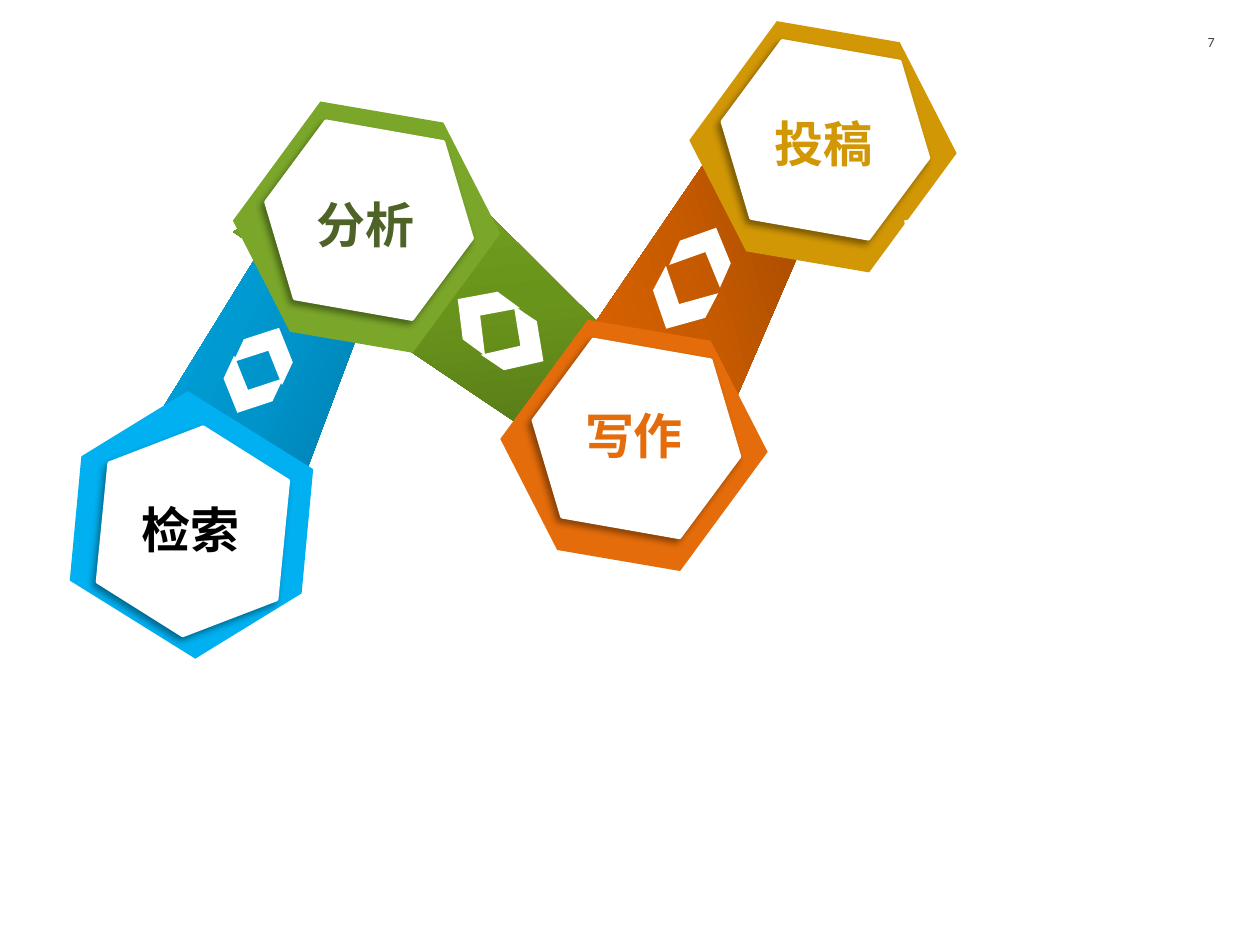
from dataclasses import dataclass
from math import cos, radians, sin

from lxml import etree
from pptx import Presentation
from pptx.dml.color import RGBColor
from pptx.enum import shapes, text
from pptx.oxml import ns, parse_xml
from pptx.util import Cm, Pt


@dataclass(frozen=True)
class Theme:
    font: str = "Calibri"
    label_size: int = 28
    number_size: int = 8
    number: str = "444444"
    white: str = "FFFFFF"
    shadow: str = "000000"


THEME = Theme()
OUTER_SIZE = (5.23, 4.5)
INNER_SIZE = (4.22, 3.63)
LABEL_SIZE = (5.08, 1.45)
SMALL_CHEVRON, MEDIUM_CHEVRON, LARGE_CHEVRON = (1.02, 1.09), (1.07, 1.12), (1.12, 1.19)
TILTED = {"turn": 306.3, "inner_turn": 10, "inner_shift": (0.05, -0.14)}

# All centres and corners are in centimetres; chevrons are (centre, size, turn).
STEPS = [
    {
        "name": "检索", "color": "00B0F0", "label_color": "000000",
        "center": (3.86, 10.58), "label_center": (3.84, 10.68),
        "turn": 211.9, "inner_turn": 275.6, "inner_shift": (0.03, 0.13),
        "band": {
            "corners": [(2.46, 9.58), (6.05, 3.76), (8.28, 3.94), (5.11, 12.37)],
            "center": (5.45, 7.54), "turn": 296.1, "angle": 270,
            "colors": ("00688E", "0094CA", "00B0F0"),
        },
        "chevrons": [((5.41, 7.07), SMALL_CHEVRON, 295.2),
                     ((5.0, 7.86), SMALL_CHEVRON, 114.9)],
    },
    {
        "name": "分析", "color": "7AA62A", "label_color": "4F6228",
        "center": (7.39, 4.58), "label_center": (7.37, 4.53), **TILTED,
        "band": {
            "corners": [(8.18, 2.64), (13.21, 7.65), (12.47, 9.91), (4.7, 4.67)],
            "center": (9.51, 6.17), "turn": 39.3, "angle": 225,
            "colors": ("4A6813", "69941C", "7DAF21"),
        },
        "chevrons": [((10.49, 6.97), LARGE_CHEVRON, 33.9),
                     ((9.68, 6.36), LARGE_CHEVRON, 216.2)],
    },
    {
        "name": "写作", "color": "E46C0A", "label_color": "E46C0A",
        "center": (12.78, 8.98), "label_center": (12.78, 8.78), **TILTED,
        "band": {
            "corners": [(10.77, 8.31), (14.78, 2.44), (17.12, 2.77), (13.41, 11.35)],
            "center": (14.01, 6.36), "turn": 298.9, "angle": 225,
            "colors": ("8D4000", "C85B00", "EE6B00"),
        },
        "chevrons": [((14.22, 5.08), MEDIUM_CHEVRON, 294),
                     ((13.69, 6.13), LARGE_CHEVRON, 117.7)],
    },
    {
        "name": "投稿", "color": "D19705", "label_color": "D19705",
        "center": (16.59, 2.96), "label_center": (16.61, 2.88), **TILTED,
        "band": None,
        "chevrons": [((19.63, 5.31), MEDIUM_CHEVRON, 29.8),
                     ((18.69, 4.76), LARGE_CHEVRON, 214.2)],
    },
]


def rgb(color):
    return RGBColor.from_string(color)


def centered_box(center, size):
    """Left, top, width and height of a box around its centre."""
    (x, y), (width, height) = center, size
    return Cm(x - width / 2), Cm(y - height / 2), Cm(width), Cm(height)


def add_turned(parent, preset, center, size, turn, color):
    figure = parent.add_shape(preset, *centered_box(center, size))
    figure.rotation = turn
    figure.shadow.inherit = False
    figure.fill.solid()
    figure.fill.fore_color.rgb = rgb(color)
    figure.line.fill.background()
    return figure


def add_soft_shadow(figure):
    effects = figure._element.spPr.find(ns.qn("a:effectLst"))
    shadow = etree.SubElement(effects, ns.qn("a:outerShdw"), blurRad=str(Pt(4)),
                              dist=str(Pt(3)), dir=str(135 * 60000), rotWithShape="0")
    color = etree.SubElement(shadow, ns.qn("a:srgbClr"), val=THEME.shadow)
    etree.SubElement(color, ns.qn("a:alpha"), val="40000")


def set_gradient(figure, colors, angle):
    """Spread the colours evenly along a gradient that turns with its figure."""
    stops = "".join(
        f'<a:gs pos="{i * 100000 // (len(colors) - 1)}"><a:srgbClr val="{color}"/></a:gs>'
        for i, color in enumerate(colors))
    gradient = parse_xml(
        f'<a:gradFill {ns.nsdecls("a")} rotWithShape="1"><a:gsLst>{stops}</a:gsLst>'
        f'<a:lin ang="{angle * 60000}" scaled="0"/></a:gradFill>')
    figure._element.spPr.find(ns.qn("a:custGeom")).addnext(gradient)


def add_band(parent, corners, center, turn, angle, colors):
    """Draw the band level, then turn it so that its corners land in place."""
    c, s = cos(radians(-turn)), sin(radians(-turn))
    offsets = [(x - center[0], y - center[1]) for x, y in corners]
    level = [(Cm(center[0] + x * c - y * s), Cm(center[1] + x * s + y * c))
             for x, y in offsets]
    outline = parent.build_freeform(*level[0])
    outline.add_line_segments(level[1:], close=True)
    band = outline.convert_to_shape()
    band.rotation = turn
    band.shadow.inherit = False
    band.line.fill.background()
    set_gradient(band, colors, angle)


def format_text(frame, size, color, alignment, bold=False):
    paragraph = frame.paragraphs[0]
    paragraph.alignment = alignment
    font = paragraph.runs[0].font
    font.name, font.size, font.bold = THEME.font, Pt(size), bold
    font.color.rgb = rgb(color)


def add_label(parent, step):
    frame = parent.add_textbox(*centered_box(step["label_center"], LABEL_SIZE)).text_frame
    frame.word_wrap = True
    frame.auto_size = text.MSO_AUTO_SIZE.SHAPE_TO_FIT_TEXT
    frame.text = step["name"]
    format_text(frame, THEME.label_size, step["label_color"], text.PP_ALIGN.CENTER, True)


def add_step(slide, step):
    parent = slide.shapes.add_group_shape().shapes
    if step["band"]:
        add_band(parent, **step["band"])
    hexagon = shapes.MSO_SHAPE.HEXAGON
    add_turned(parent, hexagon, step["center"], OUTER_SIZE, step["turn"], step["color"])
    inner_center = [a + b for a, b in zip(step["center"], step["inner_shift"])]
    inner = add_turned(parent, hexagon, inner_center, INNER_SIZE,
                       step["inner_turn"], THEME.white)
    inner.line.color.rgb = rgb(THEME.white)
    inner.line.width = Pt(2)
    add_soft_shadow(inner)
    add_label(parent, step)
    for center, size, turn in step["chevrons"]:
        add_turned(parent, shapes.MSO_SHAPE.CHEVRON, center, size, turn, THEME.white)


def add_page_number(slide, number):
    frame = slide.shapes.add_textbox(Cm(23.88), Cm(0.41), Cm(0.61), Cm(0.61)).text_frame
    frame.margin_left = frame.margin_right = frame.margin_top = frame.margin_bottom = 0
    frame.vertical_anchor = text.MSO_ANCHOR.BOTTOM
    frame.word_wrap = True
    frame.text = number
    format_text(frame, THEME.number_size, THEME.number, text.PP_ALIGN.RIGHT)


def main():
    deck = Presentation()
    deck.slide_width, deck.slide_height = Cm(25.4), Cm(19.05)
    slide = deck.slides.add_slide(deck.slide_layouts[6])
    add_page_number(slide, "7")
    for step in STEPS:
        add_step(slide, step)
    deck.save("out.pptx")


if __name__ == "__main__":
    main()
